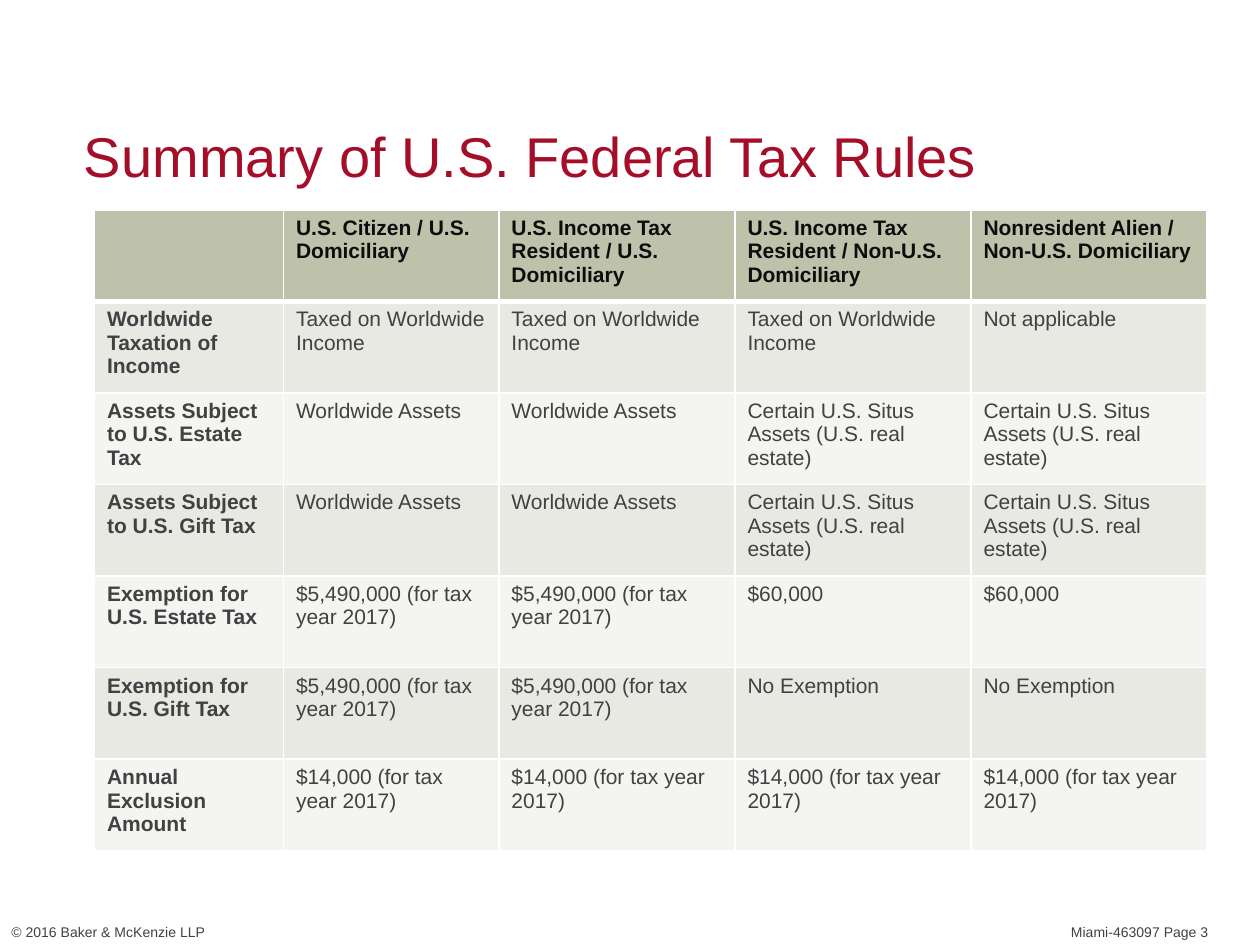
"""Build the slide summarising U.S. federal tax rules."""
from dataclasses import dataclass

from lxml.etree import SubElement
from pptx import Presentation
from pptx.dml.color import RGBColor
from pptx.enum.text import MSO_ANCHOR, MSO_AUTO_SIZE, PP_ALIGN
from pptx.oxml.ns import qn
from pptx.slide import Slide
from pptx.table import _Cell
from pptx.text.text import TextFrame
from pptx.util import Pt


@dataclass(frozen=True)
class Theme:
    font: str = "Arial"
    title: str = "A50E29"
    text: str = "404143"
    head_text: str = "0D0D0D"
    head_fill: str = "BFC2AA"
    bands: tuple[str, str] = ("E8E9E2", "F4F4F1")
    border: str = "FFFFFF"
    title_size: float = 32
    table_size: float = 12
    footer_size: float = 8


@dataclass(frozen=True)
class Rule:
    label: str
    values: tuple[str, str, str, str]


@dataclass(frozen=True)
class Footer:
    text: str
    left: float
    width: float


THEME = Theme()
TITLE = "Summary of U.S. Federal Tax Rules"
COL_WIDTHS = (108, 123.1, 134.9, 134.9, 134.9)
ROW_HEIGHT = 52.3
SITUS = "Certain U.S. Situs Assets (U.S. real estate)"
WORLD = "Worldwide Assets"
TAXED = "Taxed on Worldwide Income"
EXEMPT = "$5,490,000 (for tax year 2017)"
ANNUAL = "$14,000 (for tax year 2017)"
HEADER = Rule("", (
    "U.S. Citizen / U.S. Domiciliary",
    "U.S. Income Tax Resident / U.S. Domiciliary",
    "U.S. Income Tax Resident / Non-U.S. Domiciliary",
    "Nonresident Alien / Non-U.S. Domiciliary",
))
RULES = (
    Rule("Worldwide Taxation of Income", (TAXED, TAXED, TAXED, "Not applicable")),
    Rule("Assets Subject to U.S. Estate Tax", (WORLD, WORLD, SITUS, SITUS)),
    Rule("Assets Subject to U.S. Gift Tax", (WORLD, WORLD, SITUS, SITUS)),
    Rule("Exemption for U.S. Estate Tax", (EXEMPT, EXEMPT, "$60,000", "$60,000")),
    Rule("Exemption for U.S. Gift Tax", (EXEMPT, EXEMPT, "No Exemption", "No Exemption")),
    Rule("Annual Exclusion Amount", (ANNUAL,) * 4),
)
FOOTERS = (
    Footer("© 2016 Baker & McKenzie LLP", 6.5, 623.5),
    Footer("Miami-463097 Page 3", 612, 108),
)


def write(tf: TextFrame, text: str, size: float, color: str, bold: bool = False) -> None:
    """Fill a text frame with one formatted paragraph."""
    tf.word_wrap = True
    p = tf.paragraphs[0]
    p.text = text
    p.alignment = PP_ALIGN.LEFT
    p.font.name = THEME.font
    p.font.size = Pt(size)
    p.font.bold = bold
    p.font.color.rgb = RGBColor.from_string(color)


def clear_margins(tf: TextFrame) -> None:
    """Remove the inner margins of a text frame."""
    tf.margin_left = tf.margin_top = tf.margin_right = tf.margin_bottom = 0


def set_borders(cell: _Cell, top: float, bottom: float) -> None:
    """Draw the four borders of a cell."""
    tc_pr = cell._tc.get_or_add_tcPr()
    for side, width in (("L", 1), ("R", 1), ("T", top), ("B", bottom)):
        ln = SubElement(tc_pr, qn(f"a:ln{side}"), w=str(Pt(width)))
        SubElement(SubElement(ln, qn("a:solidFill")), qn("a:srgbClr"), val=THEME.border)


def add_title(s: Slide) -> None:
    """Place and format the title."""
    sp = s.shapes.title
    sp.left, sp.top, sp.width, sp.height = Pt(48), Pt(54), Pt(644.5), Pt(54)
    tf = sp.text_frame
    write(tf, TITLE, THEME.title_size, THEME.title)
    clear_margins(tf)
    tf.vertical_anchor = MSO_ANCHOR.BOTTOM
    tf.auto_size = MSO_AUTO_SIZE.NONE


def add_rules_table(s: Slide) -> None:
    """Add the table of tax rules."""
    rows = (HEADER, *RULES)
    frame = s.shapes.add_table(len(rows), len(COL_WIDTHS), Pt(54), Pt(120),
                               Pt(sum(COL_WIDTHS)), Pt(ROW_HEIGHT * len(rows)))
    table = frame.table
    for col, width in zip(table.columns, COL_WIDTHS):
        col.width = Pt(width)
    for i, rule in enumerate(rows):
        table.rows[i].height = Pt(ROW_HEIGHT)
        head = i == 0
        fill = THEME.head_fill if head else THEME.bands[(i - 1) % 2]
        color = THEME.head_text if head else THEME.text
        for j, text in enumerate((rule.label, *rule.values)):
            cell = table.cell(i, j)
            set_borders(cell, 3 if i == 1 else 1, 3 if head else 1)
            cell.fill.solid()
            cell.fill.fore_color.rgb = RGBColor.from_string(fill)
            write(cell.text_frame, text, THEME.table_size, color, head or j == 0)


def add_footer(s: Slide, footer: Footer) -> None:
    """Add one line of footer text."""
    sp = s.shapes.add_textbox(Pt(footer.left), Pt(527.8), Pt(footer.width), Pt(10))
    clear_margins(sp.text_frame)
    write(sp.text_frame, footer.text, THEME.footer_size, THEME.text)
    sp.text_frame.paragraphs[0].space_after = Pt(6)


def main() -> None:
    """Build and save the slide."""
    prs = Presentation()
    prs.slide_width, prs.slide_height = Pt(720), Pt(540)
    s = prs.slides.add_slide(prs.slide_layouts[5])
    for footer in FOOTERS:
        add_footer(s, footer)
    add_title(s)
    add_rules_table(s)
    prs.save("out.pptx")


if __name__ == "__main__":
    main()
